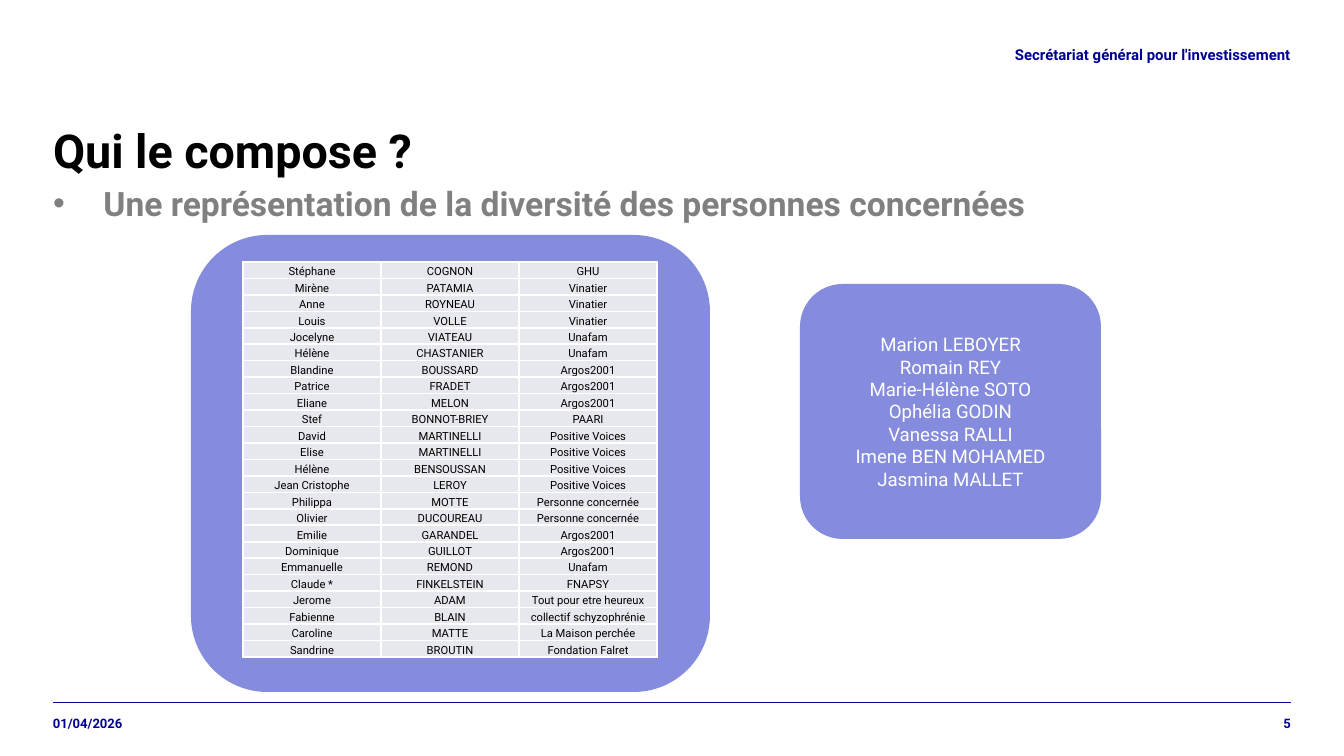
from dataclasses import dataclass

from pptx import Presentation
from pptx.dml.color import RGBColor
from pptx.enum.shapes import MSO_CONNECTOR as Link, MSO_SHAPE as Form
from pptx.enum.text import MSO_ANCHOR as Anchor, MSO_AUTO_SIZE as Fit, PP_ALIGN as Align
from pptx.oxml.ns import qn
from pptx.util import Emu, Pt
from lxml.etree import SubElement as Sub

WIDE, HIGH = 1344, 756
SCALE = 9144000 / WIDE
FACE = "Roboto"
NAVY, LILAC, PALE, WHITE, BLACK, GREY = (
    "000091", "858BDD", "E7E7EE", "FFFFFF", "000000", "808080")


@dataclass
class Box:
    x: int
    y: int
    w: int
    h: int


@dataclass
class Style:
    size: int
    color: str
    bold: bool = False
    align: Align = Align.LEFT


@dataclass
class Label:
    text: str
    box: Box
    style: Style


def px(n: int) -> Emu:
    return Emu(round(n * SCALE))


def rgb(code: str) -> RGBColor:
    return RGBColor.from_string(code)


def area(box: Box) -> list[Emu]:
    return [px(n) for n in (box.x, box.y, box.w, box.h)]


def dress(para, style: Style) -> None:
    para.alignment = style.align
    font = para.font
    font.name, font.size, font.bold = FACE, Pt(style.size), style.bold
    font.color.rgb = rgb(style.color)


def fill_text(shape, text: str, style: Style, anchor: Anchor) -> None:
    frame = shape.text_frame
    frame.word_wrap, frame.auto_size = True, Fit.NONE
    frame.vertical_anchor = anchor
    frame.margin_left = frame.margin_right = 0
    frame.margin_top = frame.margin_bottom = 0
    frame.text = text
    for para in frame.paragraphs:
        dress(para, style)


def fill_holder(shape, label: Label) -> None:
    shape.left, shape.top, shape.width, shape.height = area(label.box)
    fill_text(shape, label.text, label.style, Anchor.TOP)
    shape.text_frame.paragraphs[0].space_before = Pt(0)


def add_label(slide, label: Label) -> None:
    fill_text(slide.shapes.add_textbox(*area(label.box)),
              label.text, label.style, Anchor.MIDDLE)


def add_panel(slide, box: Box):
    panel = slide.shapes.add_shape(Form.ROUNDED_RECTANGLE, *area(box))
    panel.shadow.inherit = False
    panel.fill.solid()
    panel.fill.fore_color.rgb = rgb(LILAC)
    panel.line.fill.background()
    return panel


def fill_cell(cell, text: str, style: Style) -> None:
    cell.text = text
    dress(cell.text_frame.paragraphs[0], style)
    cell.vertical_anchor = Anchor.BOTTOM
    cell.margin_left = cell.margin_right = cell.margin_top = px(1)
    cell.margin_bottom = 0
    props = cell._tc.get_or_add_tcPr()
    for side in ("a:lnL", "a:lnR", "a:lnT", "a:lnB"):
        edge = Sub(props, qn(side), w=str(Pt(1)))
        Sub(Sub(edge, qn("a:solidFill")), qn("a:srgbClr"), val=WHITE)
    cell.fill.solid()
    cell.fill.fore_color.rgb = rgb(PALE)


def add_grid(slide, box: Box, rows: list[tuple[str, ...]], style: Style) -> None:
    table = slide.shapes.add_table(len(rows), len(rows[0]), *area(box)).table
    table.first_row = table.horz_banding = False
    for row, words in zip(table.rows, rows):
        row.height = px(box.h) // len(rows)
        for cell, word in zip(row.cells, words):
            fill_cell(cell, word, style)


MEMBERS = [
    ("Stéphane", "COGNON", "GHU"),
    ("Mirène", "PATAMIA", "Vinatier"),
    ("Anne", "ROYNEAU", "Vinatier"),
    ("Louis", "VOLLE", "Vinatier"),
    ("Jocelyne", "VIATEAU", "Unafam"),
    ("Hélène", "CHASTANIER", "Unafam"),
    ("Blandine", "BOUSSARD", "Argos2001"),
    ("Patrice", "FRADET", "Argos2001"),
    ("Eliane", "MELON", "Argos2001"),
    ("Stef", "BONNOT-BRIEY", "PAARI"),
    ("David", "MARTINELLI", "Positive Voices"),
    ("Elise", "MARTINELLI", "Positive Voices"),
    ("Hélène", "BENSOUSSAN", "Positive Voices"),
    ("Jean Cristophe", "LEROY", "Positive Voices"),
    ("Philippa", "MOTTE", "Personne concernée"),
    ("Olivier", "DUCOUREAU", "Personne concernée"),
    ("Emilie", "GARANDEL", "Argos2001"),
    ("Dominique", "GUILLOT", "Argos2001"),
    ("Emmanuelle", "REMOND", "Unafam"),
    ("Claude *", "FINKELSTEIN", "FNAPSY"),
    ("Jerome", "ADAM", "Tout pour etre heureux"),
    ("Fabienne", "BLAIN", "collectif schyzophrénie"),
    ("Caroline", "MATTE", "La Maison perchée"),
    ("Sandrine", "BROUTIN", "Fondation Falret"),
]
TEAM = ["Marion LEBOYER", "Romain REY", "Marie-Hélène SOTO", "Ophélia GODIN",
        "Vanessa RALLI", "Imene BEN MOHAMED", "Jasmina MALLET"]

TITLE = Label("Qui le compose ?", Box(53, 128, 1238, 79), Style(25, BLACK, True))
LEAD = Label("Une représentation de la diversité des personnes concernées",
             Box(53, 183, 1238, 66), Style(18, GREY, True))
LABELS = [
    Label("01/04/2026", Box(53, 703, 180, 40), Style(7, NAVY, True)),
    Label("Secrétariat général pour l'investissement",
          Box(251, 28, 1040, 53), Style(8, NAVY, True, Align.RIGHT)),
    Label("5", Box(1222, 703, 69, 40), Style(7, NAVY, True, Align.RIGHT)),
]


def main() -> None:
    deck = Presentation()
    deck.slide_width, deck.slide_height = px(WIDE), px(HIGH)
    slide = deck.slides.add_slide(deck.slide_layouts[1])

    # Title and subtitle
    title, body = slide.placeholders
    fill_holder(title, TITLE)
    title.text_frame.paragraphs[0].line_spacing = 0.9
    body.text_frame.text = LEAD.text
    props = body.text_frame.paragraphs[0]._p.get_or_add_pPr()
    props.set("marL", "0")
    props.set("indent", "0")
    Sub(props, qn("a:buNone"))
    fill_holder(body, LEAD)

    # Footer rule, header and footer labels
    rule = slide.shapes.add_connector(
        Link.STRAIGHT, px(53), px(703), px(1291), px(703))
    rule.line.color.rgb = rgb(NAVY)
    rule.line.width = Pt(0.5)
    Sub(rule._element.spPr, qn("a:effectLst"))
    for label in LABELS:
        add_label(slide, label)

    # Members, as a table on a panel
    add_panel(slide, Box(191, 235, 519, 457))
    add_grid(slide, Box(243, 262, 414, 396), MEMBERS,
             Style(6, BLACK, align=Align.CENTER))

    # Team panel
    panel = add_panel(slide, Box(800, 284, 301, 255))
    fill_text(panel, "\n".join(TEAM),
              Style(10, WHITE, align=Align.CENTER), Anchor.MIDDLE)

    deck.save("out.pptx")


if __name__ == "__main__":
    main()
